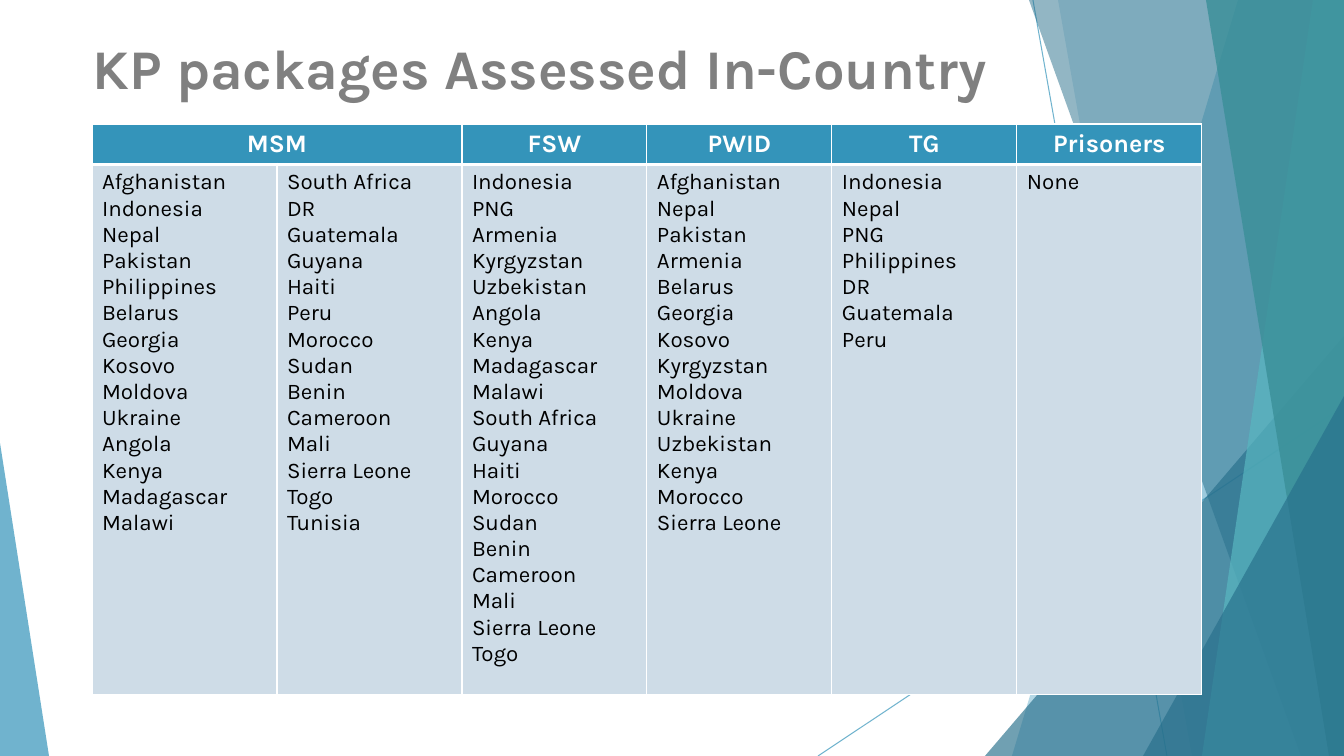
from lxml.etree import SubElement
from pptx import Presentation
from pptx.dml.color import RGBColor
from pptx.enum.shapes import MSO_CONNECTOR, MSO_SHAPE
from pptx.enum.text import PP_ALIGN
from pptx.oxml import parse_xml
from pptx.oxml.ns import nsdecls, qn
from pptx.util import Pt

EMU_PER_PX = 914400 / 100.8
SLIDE_WIDTH, SLIDE_HEIGHT = 1344, 756
FONT = "Karla"

BLUE = RGBColor(0x34, 0x94, 0xBA)
DARK_BLUE = RGBColor(0x27, 0x6F, 0x8B)
TURQUOISE = RGBColor(0x58, 0xB6, 0xC0)
TEAL = RGBColor(0x3A, 0x8F, 0x98)
PALE_BLUE = RGBColor(0xCE, 0xDC, 0xE7)
GREY = RGBColor(0x80, 0x80, 0x80)
WHITE = RGBColor(0xFF, 0xFF, 0xFF)
BLACK = RGBColor(0x00, 0x00, 0x00)

HEADERS = {0: "MSM", 2: "FSW", 3: "PWID", 4: "TG", 5: "Prisoners"}
COUNTRIES = [
    "Afghanistan, Indonesia, Nepal, Pakistan, Philippines, Belarus, Georgia, "
    "Kosovo, Moldova, Ukraine, Angola, Kenya, Madagascar, Malawi",
    "South Africa, DR, Guatemala, Guyana, Haiti, Peru, Morocco, Sudan, Benin, "
    "Cameroon, Mali, Sierra Leone, Togo, Tunisia",
    "Indonesia, PNG, Armenia, Kyrgyzstan, Uzbekistan, Angola, Kenya, "
    "Madagascar, Malawi, South Africa, Guyana, Haiti, Morocco, Sudan, Benin, "
    "Cameroon, Mali, Sierra Leone, Togo",
    "Afghanistan, Nepal, Pakistan, Armenia, Belarus, Georgia, Kosovo, "
    "Kyrgyzstan, Moldova, Ukraine, Uzbekistan, Kenya, Morocco, Sierra Leone",
    "Indonesia, Nepal, PNG, Philippines, DR, Guatemala, Peru",
    "None",
]


def px(length):
    """Turn pixels into EMU."""
    return round(length * EMU_PER_PX)


def set_opacity(element, percent):
    """Make the first RGB colour inside an element translucent."""
    color = next(element.iter(qn("a:srgbClr")))
    SubElement(color, qn("a:alpha")).set("val", str(percent * 1000))


def paint(shape, color, opacity):
    """Give a shape a translucent fill with no line or shadow."""
    shape.shadow.inherit = False
    shape.fill.solid()
    shape.fill.fore_color.rgb = color
    shape.line.fill.background()
    set_opacity(shape._element.spPr, opacity)


def add_hairline(slide, start, end):
    """Draw a thin translucent line."""
    points = [px(value) for value in (*start, *end)]
    line = slide.shapes.add_connector(MSO_CONNECTOR.STRAIGHT, *points)
    line.line.color.rgb = BLUE
    line.line.width = Pt(0.75)
    properties = line._element.spPr
    set_opacity(properties, 70)
    SubElement(properties, qn("a:effectLst"))


def add_band(slide, top_x, bottom_x, color, opacity):
    """Fill from a slanted left edge to the right side of the slide."""
    builder = slide.shapes.build_freeform(px(top_x), 0, scale=1.0)
    corners = [(SLIDE_WIDTH, 0), (SLIDE_WIDTH, SLIDE_HEIGHT), (bottom_x, SLIDE_HEIGHT)]
    builder.add_line_segments([(px(x), px(y)) for x, y in corners], close=True)
    paint(builder.convert_to_shape(), color, opacity)


def add_corner(slide, left, top, width, apex, color, opacity):
    """Draw a right triangle standing on the bottom of the slide."""
    triangle = slide.shapes.add_shape(
        MSO_SHAPE.ISOSCELES_TRIANGLE,
        px(left), px(top), px(width), px(SLIDE_HEIGHT - top),
    )
    triangle.adjustments[0] = apex
    paint(triangle, color, opacity)


def add_facets(slide):
    """Draw the overlapping facets at the sides of the slide."""
    add_hairline(slide, (1033, 0), (1167, SLIDE_HEIGHT))
    add_hairline(slide, (SLIDE_WIDTH, 406), (818, SLIDE_HEIGHT))
    add_band(slide, 1238, 1012, BLUE, 36)
    add_band(slide, 1058, 1192, BLUE, 20)
    add_corner(slide, 985, 336, 359, 1, DARK_BLUE, 66)
    add_band(slide, 1029, 1301, DARK_BLUE, 50)
    add_band(slide, 1313, 1202, TURQUOISE, 70)
    add_band(slide, 1206, 1329, TEAL, 80)
    add_corner(slide, 1143, 396, 201, 1, DARK_BLUE, 66)
    add_corner(slide, 0, 443, 49, 0, BLUE, 70)


def format_text(text_frame, size, color, bold, alignment=PP_ALIGN.LEFT):
    """Style every paragraph and run of a text frame."""
    for paragraph in text_frame.paragraphs:
        paragraph.alignment = alignment
        for run in paragraph.runs:
            run.font.name = FONT
            run.font.size = Pt(size)
            run.font.bold = bold
            run.font.color.rgb = color


def add_title(slide, text):
    """Place the slide title."""
    title = slide.shapes.add_textbox(px(83), px(29), px(1159), px(84))
    title.text_frame.word_wrap = True
    title.text_frame.text = text
    format_text(title.text_frame, 40, GREY, True)


def style_cell(cell, fill, top, bottom):
    """Fill a cell and give it white borders, with widths in points."""
    cell.fill.solid()
    cell.fill.fore_color.rgb = fill
    properties = cell._tc.get_or_add_tcPr()
    widths = {"lnL": 1, "lnR": 1, "lnT": top, "lnB": bottom}
    for position, (side, width) in enumerate(widths.items()):
        border = parse_xml(
            f'<a:{side} {nsdecls("a")} w="{Pt(width)}"><a:solidFill>'
            f'<a:srgbClr val="{WHITE}"/></a:solidFill></a:{side}>'
        )
        properties.insert(position, border)


def add_country_table(slide):
    """Build the table of countries for each key population."""
    column_width, row_heights = 185, (40, 530)
    count = len(COUNTRIES)
    table = slide.shapes.add_table(
        2, count, px(92), px(124), px(column_width * count), px(sum(row_heights))
    ).table
    for row, height in zip(table.rows, row_heights):
        row.height = px(height)
    for index, countries in enumerate(COUNTRIES):
        table.columns[index].width = px(column_width)
        header, body = table.cell(0, index), table.cell(1, index)
        header.text_frame.text = HEADERS.get(index, "")
        format_text(header.text_frame, 18, WHITE, True, PP_ALIGN.CENTER)
        style_cell(header, BLUE, 1, 3)
        body.text_frame.text = countries.replace(", ", "\n")
        format_text(body.text_frame, 16, BLACK, False)
        style_cell(body, PALE_BLUE, 3, 1)
    table.cell(0, 0).merge(table.cell(0, 1))


def main():
    """Build and save the presentation."""
    presentation = Presentation()
    presentation.slide_width = px(SLIDE_WIDTH)
    presentation.slide_height = px(SLIDE_HEIGHT)
    slide = presentation.slides.add_slide(presentation.slide_layouts[6])
    add_facets(slide)
    add_title(slide, "KP packages Assessed In-Country")
    add_country_table(slide)
    presentation.save("out.pptx")


if __name__ == "__main__":
    main()
